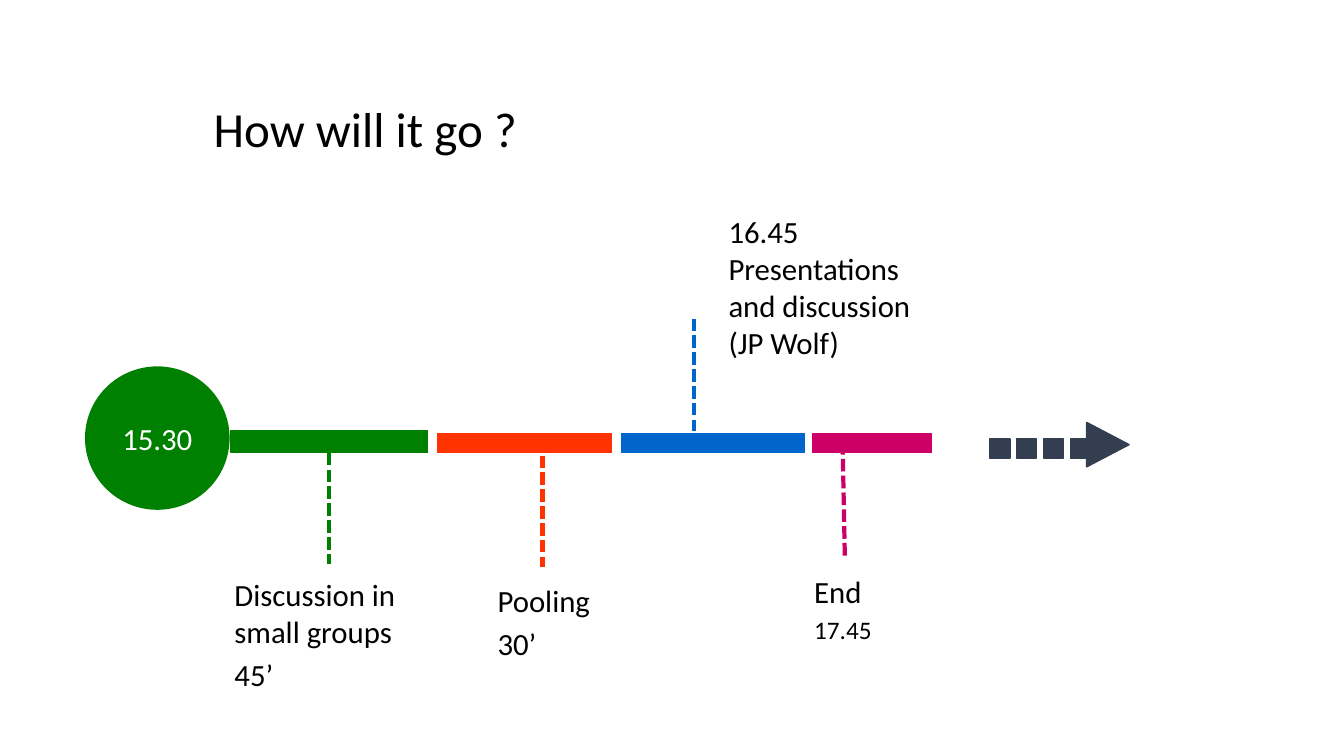
"""Build a one-slide timeline of a discussion session."""
from dataclasses import dataclass
from typing import Optional

from pptx import Presentation
from pptx.dml.color import RGBColor
from pptx.enum.dml import MSO_LINE
from pptx.enum.shapes import MSO_CONNECTOR, MSO_SHAPE
from pptx.enum.text import MSO_ANCHOR, PP_ALIGN
from pptx.oxml.ns import qn
from pptx.shapes.autoshape import Shape
from pptx.slide import Slide
from pptx.text.text import _Paragraph as Paragraph
from pptx.util import Cm, Pt
from lxml.etree import SubElement

GREEN, ORANGE, BLUE, PINK = "008000", "FF3300", "0066CC", "CC0066"
SLATE, BLACK, WHITE = "333F50", "000000", "FFFFFF"
BODY_SIZE = 22


@dataclass(frozen=True)
class Box:
    """Place and size in centimetres."""
    left: float
    top: float
    width: float
    height: float

    def lengths(self) -> tuple[Cm, Cm, Cm, Cm]:
        """Return the four measures as lengths."""
        return Cm(self.left), Cm(self.top), Cm(self.width), Cm(self.height)


@dataclass(frozen=True)
class Stage:
    """One stretch of the timeline with its dashed pointer."""
    bar: Box
    color: str
    start: tuple[float, float]
    end: tuple[float, float]
    joined_side: Optional[int] = None


@dataclass(frozen=True)
class Label:
    """A text box given as (text, size) lines."""
    box: Box
    lines: tuple[tuple[str, int], ...]


STAGES = (
    Stage(Box(5.82, 10.85, 4.96, 0.56), GREEN, (8.3, 11.41), (8.3, 14.22), 2),
    Stage(Box(11.02, 10.92, 4.4, 0.48), ORANGE, (13.67, 11.48), (13.67, 14.3)),
    Stage(Box(15.67, 10.92, 4.6, 0.48), BLUE, (17.48, 8.03), (17.48, 10.85)),
    Stage(Box(20.47, 10.92, 3, 0.48), PINK, (21.29, 14), (21.23, 10.95)),
)
LABELS = (
    Label(Box(5.66, 14.38, 5.21, 3.28),
          (("Discussion in small groups", BODY_SIZE), ("45’", BODY_SIZE))),
    Label(Box(12.29, 14.53, 8.46, 2.34),
          (("Pooling", BODY_SIZE), ("30’", BODY_SIZE))),
    Label(Box(18.11, 5.23, 6.05, 5.16),
          (("16.45 Presentations and discussion (JP Wolf)", BODY_SIZE),)),
    Label(Box(20.27, 14.3, 7.29, 3.25), (("End", BODY_SIZE), ("17.45", 18))),
)


def rgb(color: str) -> RGBColor:
    """Turn a hex string into a colour."""
    return RGBColor.from_string(color)


def set_font(para: Paragraph, size: int, color: str) -> None:
    """Format a whole paragraph."""
    para.font.name = "Calibri"
    para.font.size = Pt(size)
    para.font.color.rgb = rgb(color)


def add_solid(page: Slide, kind: MSO_SHAPE, box: Box, color: str) -> Shape:
    """Add a shape filled and outlined in one colour."""
    shape = page.shapes.add_shape(kind, *box.lengths())
    shape.shadow.inherit = False
    shape.fill.solid()
    shape.fill.fore_color.rgb = rgb(color)
    shape.line.color.rgb = rgb(color)
    shape.line.width = Pt(1)
    return shape


def add_title(page: Slide, text: str) -> None:
    """Place and format the title."""
    title = page.shapes.title
    title.left, title.top, title.width, title.height = Box(5.13, 1.73, 22.86, 3.18).lengths()
    title.text_frame.text = text
    title.text_frame.vertical_anchor = MSO_ANCHOR.MIDDLE
    para = title.text_frame.paragraphs[0]
    para.alignment = PP_ALIGN.LEFT
    para.line_spacing = 0.9
    set_font(para, 35, BLACK)


def add_start(page: Slide, time: str) -> None:
    """Add the circle with the starting time."""
    circle = add_solid(page, MSO_SHAPE.FLOWCHART_CONNECTOR, Box(2.16, 9.25, 3.61, 3.58), GREEN)
    circle.text_frame.text = time
    circle.text_frame.vertical_anchor = MSO_ANCHOR.MIDDLE
    para = circle.text_frame.paragraphs[0]
    para.alignment = PP_ALIGN.CENTER
    set_font(para, BODY_SIZE, WHITE)


def add_stage(page: Slide, stage: Stage) -> None:
    """Add a timeline bar and its dashed pointer."""
    bar = add_solid(page, MSO_SHAPE.RECTANGLE, stage.bar, stage.color)
    ends = [Cm(value) for value in (*stage.start, *stage.end)]
    pointer = page.shapes.add_connector(MSO_CONNECTOR.STRAIGHT, *ends)
    if stage.joined_side is not None:
        pointer.begin_connect(bar, stage.joined_side)
    pointer.line.color.rgb = rgb(stage.color)
    pointer.line.width = Pt(3)
    pointer.line.dash_style = MSO_LINE.SQUARE_DOT
    SubElement(pointer.element.spPr, qn("a:effectLst"))


def add_label(page: Slide, label: Label) -> None:
    """Add a wrapped text box."""
    frame = page.shapes.add_textbox(*label.box.lengths()).text_frame
    frame.word_wrap = True
    for index, (text, size) in enumerate(label.lines):
        para = frame.add_paragraph() if index else frame.paragraphs[0]
        para.text = text
        if index:
            para.space_before = Pt(size * 0.2)
        set_font(para, size, BLACK)


def add_arrow(page: Slide) -> None:
    """Add the arrow made of four blocks and a head."""
    for index in range(4):
        block = Box(24.94 + 0.68 * index, 11.06, 0.51, 0.48)
        add_solid(page, MSO_SHAPE.RECTANGLE, block, SLATE)
    head = add_solid(page, MSO_SHAPE.ISOSCELES_TRIANGLE, Box(27.36, 10.67, 1.12, 1.07), SLATE)
    head.rotation = 90


def main() -> None:
    """Build and save the deck."""
    deck = Presentation()
    deck.slide_width, deck.slide_height = Cm(33.87), Cm(19.05)
    page = deck.slides.add_slide(deck.slide_layouts[5])
    add_title(page, "How will it go ?")
    add_start(page, "15.30")
    for stage in STAGES:
        add_stage(page, stage)
    for label in LABELS:
        add_label(page, label)
    add_arrow(page)
    deck.save("out.pptx")


if __name__ == "__main__":
    main()
